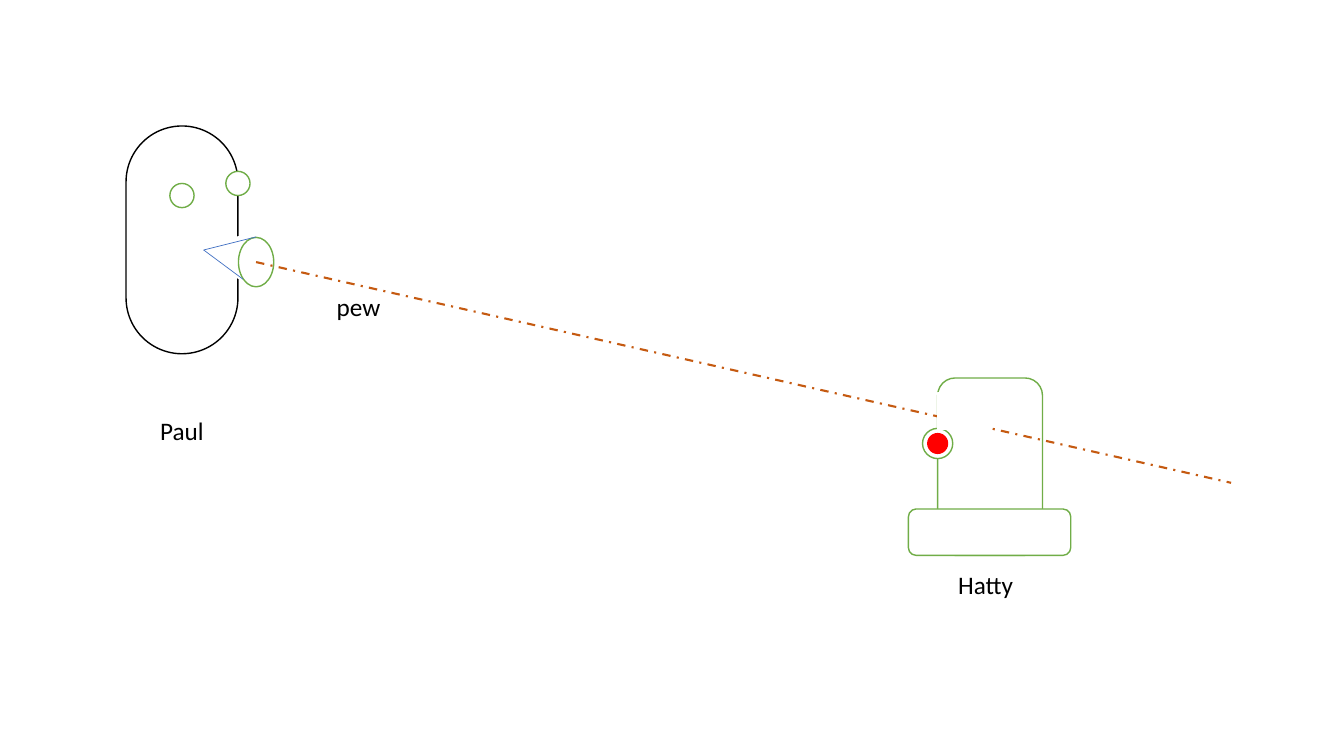
import pptx
import pptx.util
from lxml import etree
from pptx.dml.color import RGBColor
from pptx.enum.dml import MSO_LINE
from pptx.enum.shapes import MSO_CONNECTOR, MSO_SHAPE
from pptx.enum.text import MSO_AUTO_SIZE, PP_ALIGN
from pptx.oxml.ns import qn

BLACK = RGBColor(0x00, 0x00, 0x00)
WHITE = RGBColor(0xFF, 0xFF, 0xFF)
GREEN = RGBColor(0x70, 0xAD, 0x47)
RED = RGBColor(0xFF, 0x00, 0x00)
BLUE = RGBColor(0x44, 0x72, 0xC4)
ORANGE = RGBColor(0xC5, 0x5A, 0x11)

# Grid of square cells, one inch each
COLUMNS, ROWS = 13.33, 7.5
CELL = pptx.util.Inches(1)

LABEL_WIDTH, LABEL_HEIGHT = 1.11, 0.4
LABEL_FORMAT = {"name": "Calibri", "size": pptx.util.Pt(18)}


def grid(*cells):
    """Turn columns and rows into slide lengths."""
    return [round(cell * CELL) for cell in cells]


def add_part(slide, preset, left, top, width, height,
             outline=GREEN, fill=WHITE, rounding=None):
    part = slide.shapes.add_shape(preset, *grid(left, top, width, height))
    part.shadow.inherit = False
    part.fill.solid()
    part.fill.fore_color.rgb = fill
    if outline is None:
        part.line.fill.background()
    else:
        part.line.color.rgb = outline
        part.line.width = pptx.util.Pt(1)
    if rounding is not None:
        part.adjustments[0] = rounding


def add_oval(slide, centre, width, height, **look):
    column, row = centre
    add_part(slide, MSO_SHAPE.OVAL, column - width / 2, row - height / 2,
             width, height, **look)


def add_ray(slide, start, end, color, weight, dash=None):
    ray = slide.shapes.add_connector(MSO_CONNECTOR.STRAIGHT, *grid(*start, *end))
    ray.line.color.rgb = color
    line_format = {"width": pptx.util.Pt(weight), "dash_style": dash}
    for attribute, value in line_format.items():
        setattr(ray.line, attribute, value)
    etree.SubElement(ray.element.spPr, qn("a:effectLst"))


def add_label(slide, words, left, top):
    label = slide.shapes.add_textbox(*grid(left, top, LABEL_WIDTH, LABEL_HEIGHT))
    frame = label.text_frame
    frame.word_wrap = True
    frame.auto_size = MSO_AUTO_SIZE.SHAPE_TO_FIT_TEXT
    paragraph = frame.paragraphs[0]
    paragraph.alignment = PP_ALIGN.CENTER
    run = paragraph.add_run()
    run.text = words
    run.font.color.rgb = BLACK
    for attribute, value in LABEL_FORMAT.items():
        setattr(run.font, attribute, value)


def draw_paul(slide):
    head_left, head_top, head_width = 1.25, 1.25, 1.11
    face = head_left + head_width
    add_part(slide, MSO_SHAPE.ROUNDED_RECTANGLE, head_left, head_top,
             head_width, 2.26, outline=BLACK, rounding=0.5)
    # Eye and nose
    for centre in ((head_left + head_width / 2, 1.94), (face, 1.82)):
        add_oval(slide, centre, 0.24, 0.24)
    # Gap in the face for the mouth
    add_part(slide, MSO_SHAPE.RECTANGLE, face, 2.35, 0.05, 0.41, outline=WHITE)


def draw_hatty(slide):
    crown_left = 9.3
    nose = (crown_left, 4.4)
    # Crown and brim
    add_part(slide, MSO_SHAPE.ROUNDED_RECTANGLE, crown_left, 3.75, 1.04, 1.76)
    add_part(slide, MSO_SHAPE.ROUNDED_RECTANGLE, 9.01, 5.05, 1.61, 0.46)
    # Nose with its red centre
    add_oval(slide, nose, 0.3, 0.3)
    add_oval(slide, nose, 0.21, 0.21, outline=None, fill=RED)


def draw_beam(slide):
    mouth, throat = (2.54, 2.6), (2.02, 2.48)
    add_oval(slide, mouth, 0.35, 0.49)
    add_ray(slide, (2.41, 2.77), throat, BLUE, 0.5)
    add_ray(slide, throat, (2.54, 2.35), BLUE, 0.5)
    add_ray(slide, mouth, (12.21, 4.79), ORANGE, 1.5, MSO_LINE.DASH_DOT)
    # Patch that hides the beam inside Hatty
    add_part(slide, MSO_SHAPE.RECTANGLE, 9.3, 3.9, 0.53, 0.36, outline=WHITE)


def main():
    deck = pptx.Presentation()
    deck.slide_width, deck.slide_height = grid(COLUMNS, ROWS)
    slide = deck.slides.add_slide(deck.slide_layouts[6])
    draw_paul(slide)
    draw_hatty(slide)
    draw_beam(slide)
    # Labels
    for words, left, top in (("Paul", 1.25, 4.07),
                             ("Hatty", 9.22, 5.6),
                             ("pew", 3, 2.84)):
        add_label(slide, words, left, top)
    deck.save("out.pptx")


if __name__ == "__main__":
    main()
